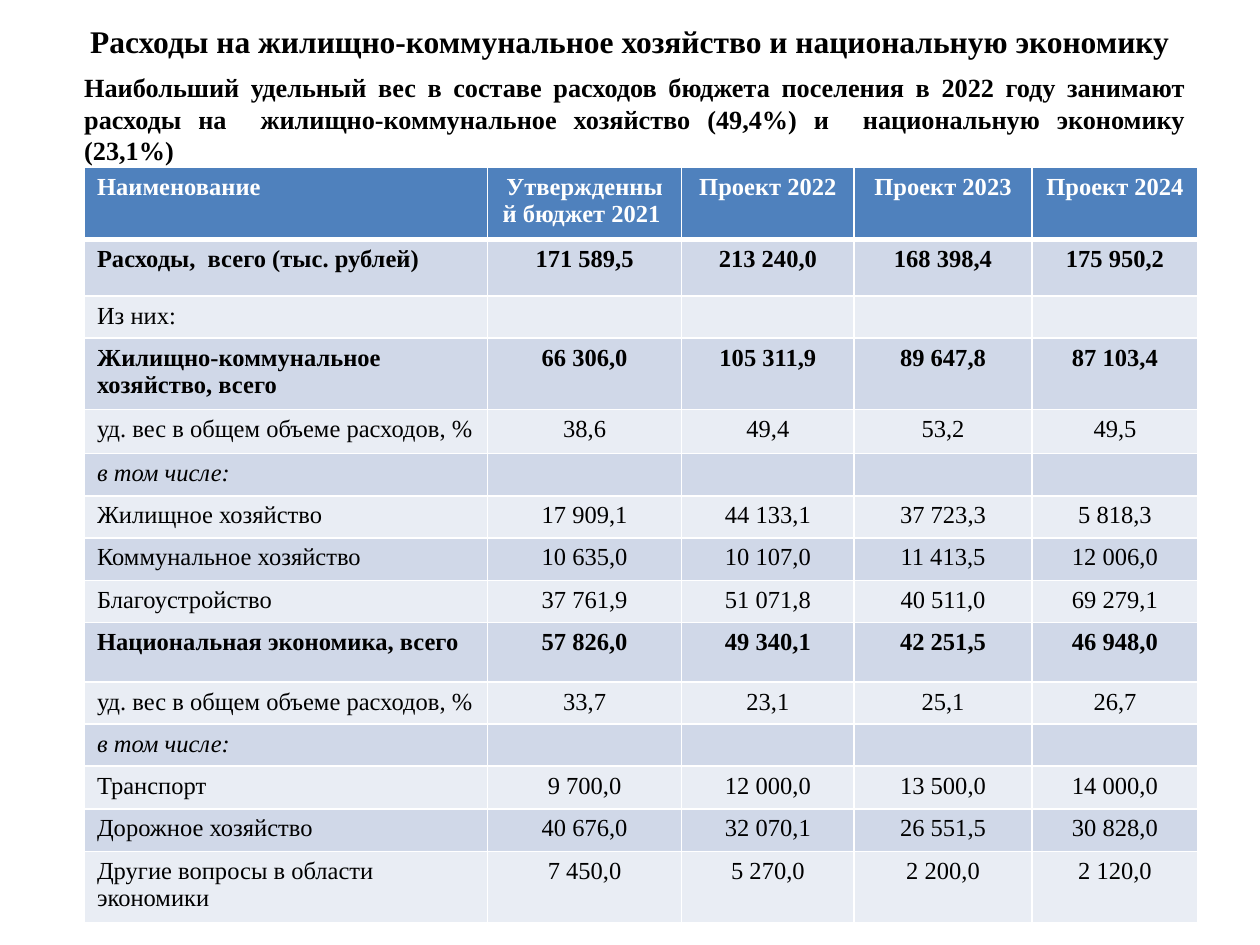
import pptx
import pptx.util
import pptx.dml.color
import pptx.enum.text
from lxml import etree
from pptx.oxml import ns

Inches = pptx.util.Inches
Pt = pptx.util.Pt
RGBColor = pptx.dml.color.RGBColor
ALIGN = pptx.enum.text.PP_ALIGN
ANCHOR = pptx.enum.text.MSO_ANCHOR

BLACK = RGBColor(0x00, 0x00, 0x00)
WHITE = RGBColor(0xFF, 0xFF, 0xFF)
HEADER_BLUE = RGBColor(0x4F, 0x81, 0xBD)
BANDS = (RGBColor(0xE9, 0xED, 0xF4), RGBColor(0xD0, 0xD8, 0xE8))
FONT = "Times New Roman"
CELL_SIZE = 14

TITLE = "Расходы на жилищно-коммунальное хозяйство и национальную экономику"
SUMMARY = (
    "Наибольший удельный вес в составе расходов бюджета поселения в 2022 году занимают "
    "расходы на  жилищно-коммунальное хозяйство (49,4%) и  национальную экономику (23,1%)"
)
COLUMN_WIDTHS = (3.2, 1.54, 1.37, 1.41, 1.32)
BOLD, ITALIC, PLAIN = {"bold": True}, {"italic": True}, {}
BUDGET_ROWS = (
    (0.57, BOLD, ("Наименование", "Утвержденный бюджет 2021  ", "Проект 2022", "Проект 2023", "Проект 2024")),
    (0.45, BOLD, ("Расходы,  всего (тыс. рублей)", "171 589,5", "213 240,0", "168 398,4", "175 950,2")),
    (0.32, PLAIN, ("Из них:", "", "", "", "")),
    (0.54, BOLD, ("Жилищно-коммунальное хозяйство, всего", "66 306,0", "105 311,9", "89 647,8", "87 103,4")),
    (0.35, PLAIN, ("уд. вес в общем объеме расходов, %", "38,6", "49,4", "53,2", "49,5")),
    (0.32, ITALIC, ("в том числе:", "", "", "", "")),
    (0.32, PLAIN, ("Жилищное хозяйство", "17 909,1", "44 133,1", "37 723,3", "5 818,3")),
    (0.34, PLAIN, ("Коммунальное хозяйство", "10 635,0", "10 107,0", "11 413,5", "12 006,0")),
    (0.32, PLAIN, ("Благоустройство", "37 761,9", "51 071,8", "40 511,0", "69 279,1")),
    (0.47, BOLD, ("Национальная экономика, всего", "57 826,0", "49 340,1", "42 251,5", "46 948,0")),
    (0.32, PLAIN, ("уд. вес в общем объеме расходов, %", "33,7", "23,1", "25,1", "26,7")),
    (0.32, ITALIC, ("в том числе:", "", "", "", "")),
    (0.34, PLAIN, ("Транспорт", "9 700,0", "12 000,0", "13 500,0", "14 000,0")),
    (0.34, PLAIN, ("Дорожное хозяйство", "40 676,0", "32 070,1", "26 551,5", "30 828,0")),
    (0.54, PLAIN, ("Другие вопросы в области экономики", "7 450,0", "5 270,0", "2 200,0", "2 120,0")),
)


def write_text(paragraph, text, size, color, align, style):
    """Write one formatted run, or keep the text size of an empty paragraph."""
    paragraph.alignment = align
    if not text:
        etree.SubElement(paragraph._p, ns.qn("a:endParaRPr"), sz=str(size * 100))
        return
    run = paragraph.add_run()
    run.text = text
    run.font.color.rgb = color
    for attribute, value in {"name": FONT, "size": Pt(size), **style}.items():
        setattr(run.font, attribute, value)


def add_heading(slide, box, text, size, align, anchor):
    """Place a bold wrapped text in the given box."""
    frame = slide.shapes.add_textbox(*map(Inches, box)).text_frame
    for attribute, value in {"word_wrap": True, "vertical_anchor": anchor}.items():
        setattr(frame, attribute, value)
    write_text(frame.paragraphs[0], text, size, BLACK, align, BOLD)


def set_borders(cell, points):
    """Draw white borders of the given widths on a cell."""
    properties = cell._tc.get_or_add_tcPr()
    for side, width in points.items():
        line = etree.SubElement(properties, ns.qn(f"a:ln{side}"), w=str(Pt(width)))
        fill = etree.SubElement(line, ns.qn("a:solidFill"))
        etree.SubElement(fill, ns.qn("a:srgbClr"), val=str(WHITE))


def add_budget_table(slide, box):
    """Place the table of expenses in the given box."""
    table = slide.shapes.add_table(
        len(BUDGET_ROWS), len(COLUMN_WIDTHS), *map(Inches, box)
    ).table
    for column, width in zip(table.columns, COLUMN_WIDTHS):
        column.width = Inches(width)
    for index, (height, style, texts) in enumerate(BUDGET_ROWS):
        table.rows[index].height = Inches(height)
        is_header = index == 0
        for position, text in enumerate(texts):
            cell = table.cell(index, position)
            set_borders(cell, {"L": 1, "R": 1, "T": 3 if index == 1 else 1, "B": 3 if is_header else 1})
            cell.fill.solid()
            cell.fill.fore_color.rgb = HEADER_BLUE if is_header else BANDS[index % 2]
            write_text(
                cell.text_frame.paragraphs[0], text, CELL_SIZE,
                WHITE if is_header else BLACK,
                ALIGN.CENTER if position else ALIGN.LEFT, style,
            )


def main():
    """Build the slide and save it."""
    deck = pptx.Presentation()
    deck.slide_width, deck.slide_height = Inches(10), Inches(7.5)
    slide = deck.slides.add_slide(deck.slide_layouts[6])
    add_heading(slide, (0.5, 0.13, 9, 0.39), TITLE, 18, ALIGN.CENTER, ANCHOR.MIDDLE)
    add_heading(slide, (0.57, 0.52, 8.94, 0.79), SUMMARY, 15, ALIGN.JUSTIFY, ANCHOR.TOP)
    table_height = sum(row[0] for row in BUDGET_ROWS)
    add_budget_table(slide, (0.67, 1.33, sum(COLUMN_WIDTHS), table_height))
    deck.save("out.pptx")


if __name__ == "__main__":
    main()
